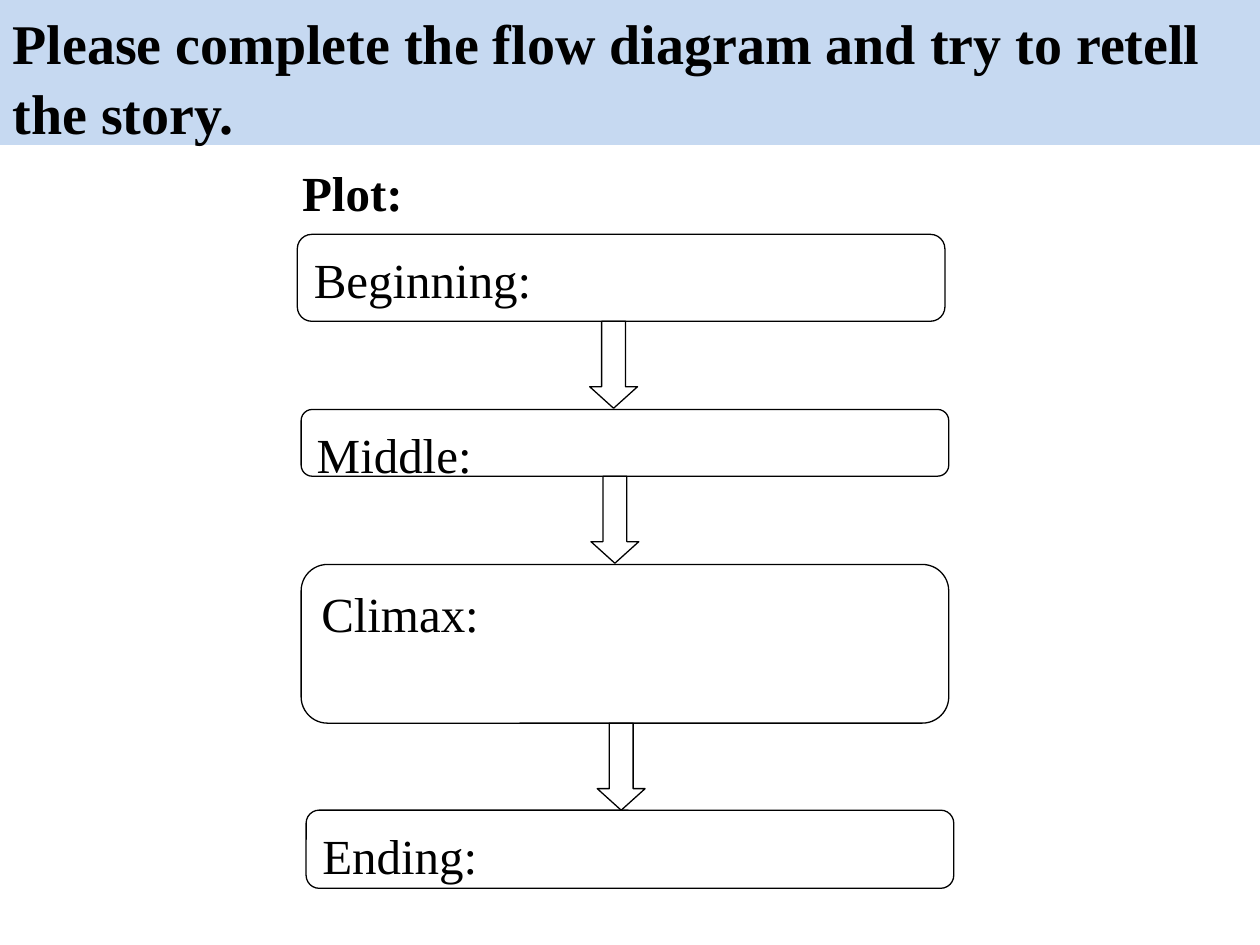
import pptx
import pptx.util
import pptx.dml.color
import pptx.enum.shapes
import pptx.enum.text
from pptx.util import Inches

COLORS = {"banner": "C6D9F1", "box": "FFFFFF", "ink": "000000"}
FONT = "Times New Roman"
BOX_WIDTH = 5.14
ARROW_WIDTH, ARROW_HEIGHT = 0.38, 0.69
STAGES = [
    ("Beginning:", 2.36, 1.86, 0.69),
    ("Middle:", 2.39, 3.25, 0.53),
    ("Climax:", 2.39, 4.48, 1.26),
    ("Ending:", 2.43, 6.43, 0.62),
]
ARROW_LEFTS = [4.68, 4.69, 4.74]


def color(name):
    return pptx.dml.color.RGBColor.from_string(COLORS[name])


def write_text(sp, text, size, bold=False, top=0.09):
    tf = sp.text_frame
    tf.word_wrap = True
    tf.auto_size = pptx.enum.text.MSO_AUTO_SIZE.NONE
    tf.vertical_anchor = pptx.enum.text.MSO_ANCHOR.TOP
    tf.margin_left = tf.margin_right = Inches(0.1)
    tf.margin_top, tf.margin_bottom = Inches(top), Inches(0)
    p = tf.paragraphs[0]
    p.alignment = pptx.enum.text.PP_ALIGN.LEFT
    r = p.add_run()
    r.text = text
    r.font.name = FONT
    r.font.size = pptx.util.Pt(size)
    r.font.bold = bold
    r.font.color.rgb = color("ink")
    return p


def add_title(s, text):
    sp = s.shapes.title
    sp.left, sp.top = Inches(0), Inches(-0.03)
    sp.width, sp.height = Inches(10), Inches(1.18)
    sp.fill.solid()
    sp.fill.fore_color.rgb = color("banner")
    p = write_text(sp, text, 32, bold=True, top=0.07)
    p.line_spacing = 1.05


def add_label(s, text):
    sp = s.shapes.add_textbox(Inches(2.3), Inches(1.2), Inches(1.64), Inches(0.6))
    write_text(sp, text, 28, bold=True)


def add_outlined(s, kind, left, top, width, height):
    sp = s.shapes.add_shape(
        kind, Inches(left), Inches(top), Inches(width), Inches(height)
    )
    sp.shadow.inherit = False
    sp.fill.solid()
    sp.fill.fore_color.rgb = color("box")
    sp.line.color.rgb = color("ink")
    sp.line.width = pptx.util.Pt(0.75)
    return sp


def add_stage(s, text, left, top, height):
    kind = pptx.enum.shapes.MSO_SHAPE.ROUNDED_RECTANGLE
    sp = add_outlined(s, kind, left, top, BOX_WIDTH, height)
    write_text(sp, text, 28)


def add_arrow(s, left, top):
    kind = pptx.enum.shapes.MSO_SHAPE.DOWN_ARROW
    sp = add_outlined(s, kind, left, top, ARROW_WIDTH, ARROW_HEIGHT)
    sp.adjustments[1] = 0.45


def main():
    prs = pptx.Presentation()
    prs.slide_width, prs.slide_height = Inches(10), Inches(7.5)
    s = prs.slides.add_slide(prs.slide_layouts[5])
    add_title(s, "Please complete the flow diagram and try to retell the story.")
    add_label(s, "Plot:")
    for stage in STAGES:
        add_stage(s, *stage)
    for left, (_, _, top, height) in zip(ARROW_LEFTS, STAGES):
        add_arrow(s, left, top + height)
    prs.save("out.pptx")


if __name__ == "__main__":
    main()
